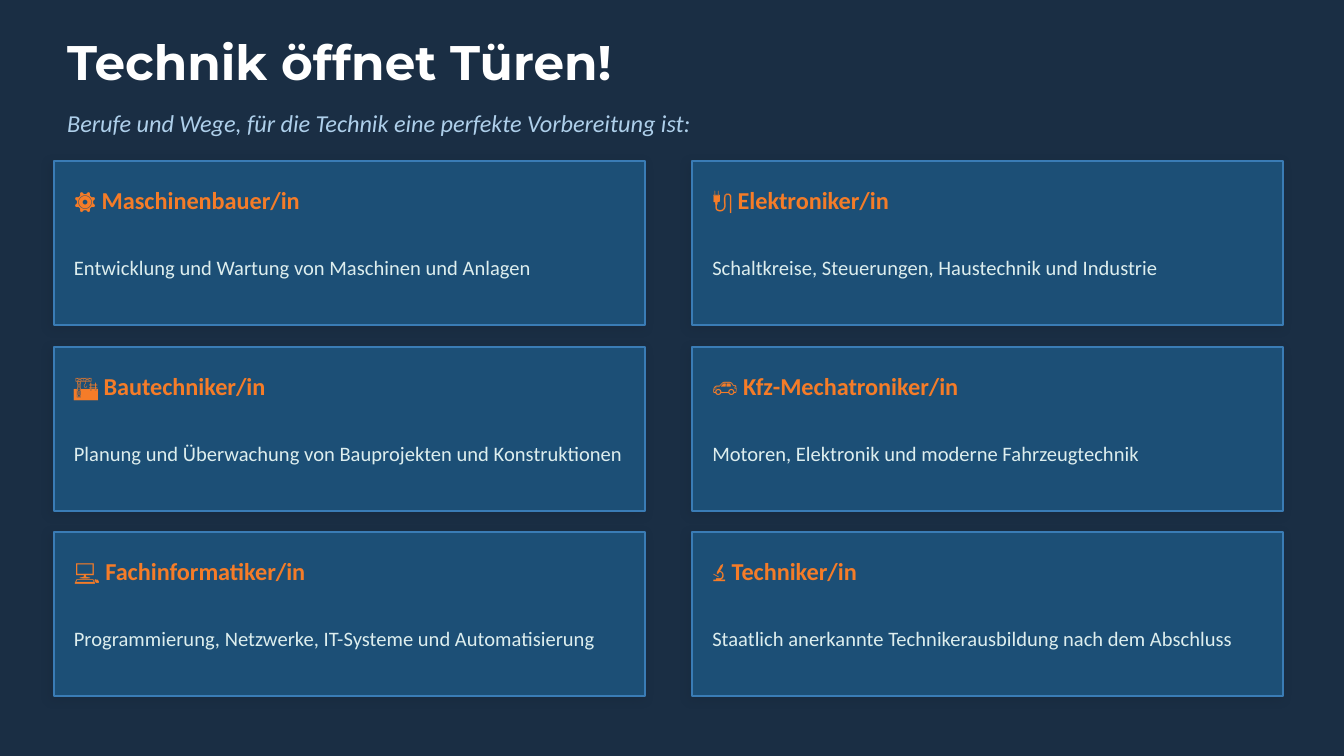
from lxml.etree import SubElement
from pptx import Presentation
from pptx.dml.color import RGBColor
from pptx.enum.shapes import MSO_SHAPE
from pptx.enum.text import MSO_ANCHOR, MSO_AUTO_SIZE, PP_ALIGN
from pptx.oxml.ns import qn
from pptx.util import Inches, Pt

COLORS = {
    "bg": "1A2E44", "title": "FFFFFF", "subtitle": "AECFEA", "card": "1E5F8E",
    "border": "3A7CB5", "heading": "F57C28", "body": "DDEEEE", "shadow": "000000",
}
CARDS = [
    ("⚙️", "Maschinenbauer/in", "Entwicklung und Wartung von Maschinen und Anlagen"),
    ("🔌", "Elektroniker/in", "Schaltkreise, Steuerungen, Haustechnik und Industrie"),
    ("🏗️", "Bautechniker/in", "Planung und Überwachung von Bauprojekten und Konstruktionen"),
    ("🚗", "Kfz-Mechatroniker/in", "Motoren, Elektronik und moderne Fahrzeugtechnik"),
    ("💻", "Fachinformatiker/in", "Programmierung, Netzwerke, IT-Systeme und Automatisierung"),
    ("🔬", "Techniker/in", "Staatlich anerkannte Technikerausbildung nach dem Abschluss"),
]
LEFT, TOP, COL, ROW = 0.4, 1.2, 4.75, 1.38
CARD_W, CARD_H, PAD = 4.4, 1.22, 0.15


def rgb(name):
    return RGBColor.from_string(COLORS[name])


def write(sp, text, size, color, font="Calibri", bold=False, italic=False):
    tf = sp.text_frame
    tf.auto_size = MSO_AUTO_SIZE.NONE
    tf.word_wrap = True
    tf.vertical_anchor = MSO_ANCHOR.MIDDLE
    tf.margin_left = tf.margin_right = tf.margin_top = tf.margin_bottom = 0
    p = tf.paragraphs[0]
    p.alignment = PP_ALIGN.LEFT
    p.space_before = Pt(0)
    r = p.add_run()
    r.text = text
    r.font.name, r.font.size = font, Pt(size)
    r.font.bold, r.font.italic = bold, italic
    r.font.color.rgb = rgb(color)
    return p


class Deck:
    """Holds the style and the current slide, and draws each kind of element."""

    def __init__(self):
        self.prs = Presentation()
        self.prs.slide_width = Inches(10)
        self.prs.slide_height = Inches(10 * 9 / 16)
        self.s = self.prs.slides.add_slide(self.prs.slide_layouts[1])
        fill = self.s.background.fill
        fill.solid()
        fill.fore_color.rgb = rgb("bg")

    def place(self, sp, x, y, w, h):
        sp.left, sp.top, sp.width, sp.height = map(Inches, (x, y, w, h))
        return sp

    def title(self, text):
        sp = self.place(self.s.shapes.title, 0.5, 0.18, 9, 0.55)
        write(sp, text, 26, "title", font="Montserrat", bold=True)

    def subtitle(self, text):
        sp = self.place(self.s.placeholders[1], 0.5, 0.75, 9, 0.32)
        p = write(sp, text, 13, "subtitle", italic=True)
        pPr = p._p.get_or_add_pPr()
        pPr.set("marL", "0")
        pPr.set("indent", "0")
        SubElement(pPr, qn("a:buNone"))

    def label(self, x, y, w, h, text, **style):
        write(self.s.shapes.add_textbox(*map(Inches, (x, y, w, h))), text, **style)

    def panel(self, x, y, w, h):
        sp = self.s.shapes.add_shape(MSO_SHAPE.RECTANGLE, *map(Inches, (x, y, w, h)))
        sp.fill.solid()
        sp.fill.fore_color.rgb = rgb("card")
        clr = sp.fill._xPr.find(qn("a:solidFill"))[0]
        SubElement(clr, qn("a:alpha"), val="70000")
        sp.line.color.rgb = rgb("border")
        sp.line.width = Pt(1)
        sp.shadow.inherit = False
        effects = sp._element.spPr.find(qn("a:effectLst"))
        shadow = SubElement(effects, qn("a:outerShdw"), blurRad=str(Pt(6)), dist=str(Pt(2)),
                            dir=str(135 * 60000), algn="bl", rotWithShape="0")
        clr = SubElement(shadow, qn("a:srgbClr"), val=COLORS["shadow"])
        SubElement(clr, qn("a:alpha"), val="10000")

    def card(self, col, row, icon, name, text):
        x, y = LEFT + col * COL, TOP + row * ROW
        w = CARD_W - 2 * PAD
        self.panel(x, y, CARD_W, CARD_H)
        self.label(x + PAD, y + 0.1, w, 0.38, f"{icon} {name}", size=13, color="heading", bold=True)
        self.label(x + PAD, y + 0.5, w, 0.58, text, size=11, color="body")


def main():
    deck = Deck()
    deck.title("Technik öffnet Türen!")
    deck.subtitle("Berufe und Wege, für die Technik eine perfekte Vorbereitung ist:")
    for i, card in enumerate(CARDS):
        row, col = divmod(i, 2)
        deck.card(col, row, *card)
    deck.prs.save("out.pptx")


if __name__ == "__main__":
    main()
